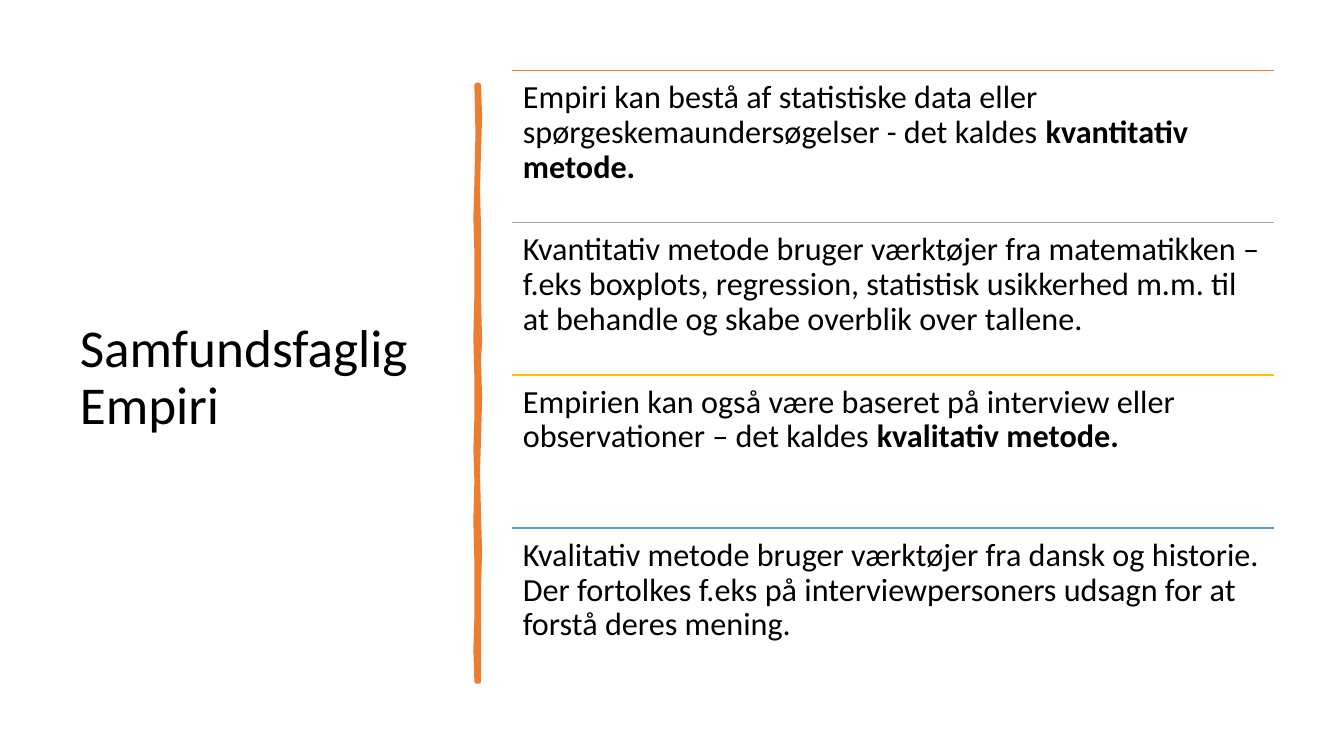
from dataclasses import dataclass

from lxml.etree import SubElement
from pptx import Presentation
from pptx.dml.color import RGBColor
from pptx.enum.shapes import MSO_CONNECTOR
from pptx.enum.text import MSO_ANCHOR
from pptx.oxml.ns import qn
from pptx.slide import Slide
from pptx.util import Emu, Pt

PX = 9525  # EMU per px, 96 px to the inch
FONT = "Calibri"
BLACK = "000000"
ORANGE = "ED7D31"

# Column of statements
COLUMN_LEFT, COLUMN_TOP, COLUMN_WIDTH, COLUMN_HEIGHT = 488, 67, 725, 581

# Hand-drawn stroke: (x, y) down the right edge, then up the left edge
STROKE_RIGHT = [
    (456, 81), (457, 112), (456, 143), (455, 180), (456, 217), (456, 282),
    (457, 325), (456, 342), (457, 380), (456, 418), (455, 450), (456, 490),
    (457, 525), (456, 561), (456, 605), (456, 649),
]
STROKE_LEFT = [
    (454, 649), (453, 618), (454, 588), (454, 535), (453, 496), (454, 458),
    (453, 428), (454, 398), (454, 360), (453, 322), (454, 281), (454, 240),
    (453, 207), (454, 174), (455, 127), (454, 81),
]


@dataclass(frozen=True)
class Span:
    text: str
    bold: bool = False


@dataclass(frozen=True)
class Statement:
    rule_color: str
    spans: tuple[Span, ...]


STATEMENTS = [
    Statement(ORANGE, (
        Span("Empiri kan bestå af statistiske data eller "
             "spørgeskemaundersøgelser - det kaldes "),
        Span("kvantitativ metode.", bold=True),
    )),
    Statement("A5A5A5", (
        Span("Kvantitativ metode bruger værktøjer fra matematikken – f.eks "
             "boxplots, regression, statistisk usikkerhed m.m. til at "
             "behandle og skabe overblik over tallene."),
    )),
    Statement("FFC000", (
        Span("Empirien kan også være baseret på interview eller "
             "observationer – det kaldes "),
        Span("kvalitativ metode.", bold=True),
    )),
    Statement("5B9BD5", (
        Span("Kvalitativ metode bruger værktøjer fra dansk og historie. "
             "Der fortolkes f.eks på interviewpersoners udsagn for at "
             "forstå deres mening."),
    )),
]


def px(length: int) -> Emu:
    return Emu(length * PX)


def color(value: str) -> RGBColor:
    return RGBColor.from_string(value)


def add_text(page: Slide, left: int, top: int, width: int, height: int,
             spans: tuple[Span, ...], size: int, anchor: MSO_ANCHOR,
             inset: int) -> None:
    box = page.shapes.add_textbox(px(left), px(top), px(width), px(height))
    frame = box.text_frame
    frame.word_wrap = True
    frame.vertical_anchor = anchor
    frame.margin_left = frame.margin_right = px(10)
    frame.margin_top = frame.margin_bottom = px(inset)
    para = frame.paragraphs[0]
    para.line_spacing = 0.9
    for span in spans:
        run = para.add_run()
        run.text = span.text
        run.font.name = FONT
        run.font.size = Pt(size)
        run.font.bold = span.bold
        run.font.color.rgb = color(BLACK)


def add_rule(page: Slide, left: int, top: int, width: int, value: str) -> None:
    rule = page.shapes.add_connector(
        MSO_CONNECTOR.STRAIGHT, px(left), px(top), px(left + width), px(top))
    rule.line.color.rgb = color(value)
    rule.line.width = Pt(1)
    SubElement(rule._element.spPr, qn("a:effectLst"))


def add_stroke(page: Slide, points: list[tuple[int, int]], value: str) -> None:
    builder = page.shapes.build_freeform(*points[0], scale=PX)
    builder.add_line_segments(points[1:], close=True)
    stroke = builder.convert_to_shape()
    stroke.shadow.inherit = False
    stroke.fill.solid()
    stroke.fill.fore_color.rgb = color(value)
    stroke.line.color.rgb = color(value)
    stroke.line.width = Pt(3.25)
    SubElement(stroke.line._get_or_add_ln(), qn("a:round"))


def main() -> None:
    deck = Presentation()
    deck.slide_width, deck.slide_height = px(1280), px(720)
    page = deck.slides.add_slide(deck.slide_layouts[6])

    # Title and dividing stroke
    add_text(page, 66, 67, 359, 587, (Span("Samfundsfaglig Empiri"),), 38,
             MSO_ANCHOR.MIDDLE, 5)
    add_stroke(page, STROKE_RIGHT + STROKE_LEFT, ORANGE)

    # Statements, each under its own rule
    pitch = COLUMN_HEIGHT / len(STATEMENTS)
    for index, statement in enumerate(STATEMENTS):
        top = COLUMN_TOP + round(index * pitch)
        add_rule(page, COLUMN_LEFT, top, COLUMN_WIDTH, statement.rule_color)
        add_text(page, COLUMN_LEFT, top, COLUMN_WIDTH, round(pitch),
                 statement.spans, 23, MSO_ANCHOR.TOP, 10)

    deck.save("out.pptx")


if __name__ == "__main__":
    main()
